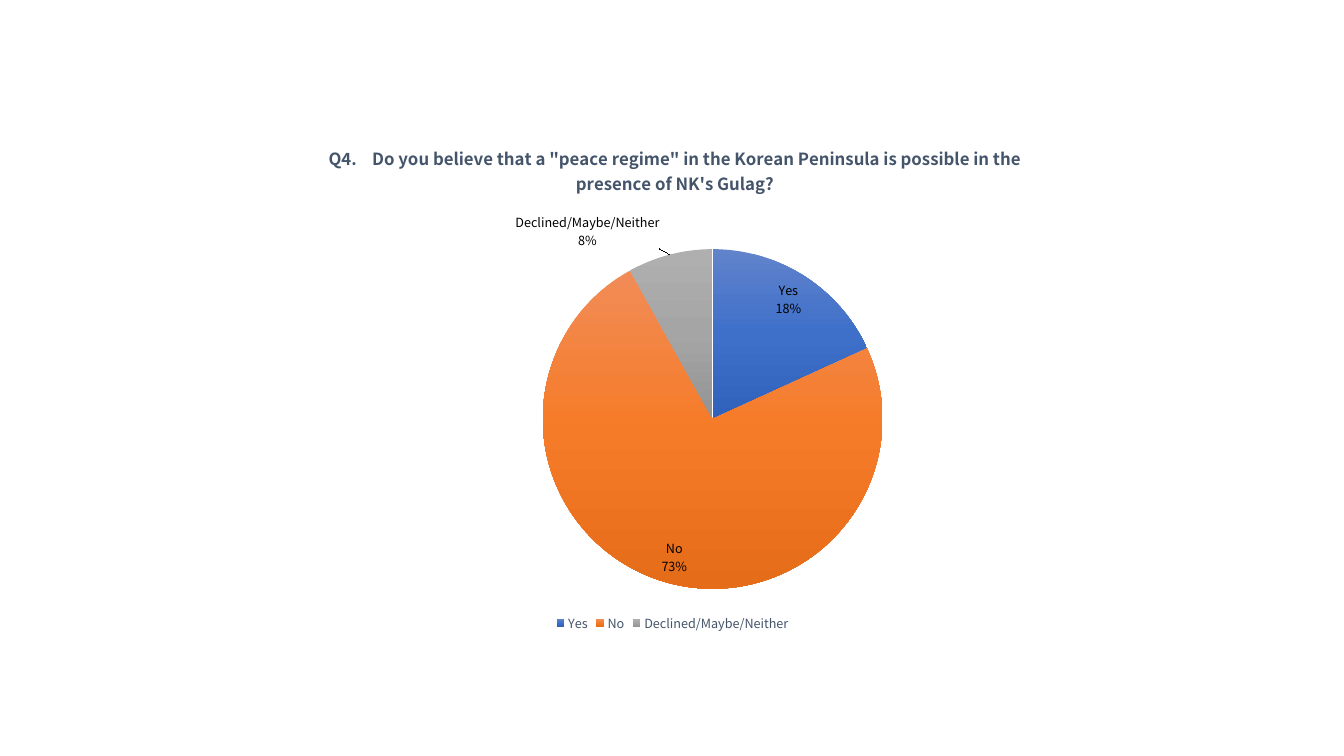
from copy import deepcopy

from lxml.etree import SubElement
from pptx import Presentation
from pptx.chart.data import CategoryChartData
from pptx.dml.color import RGBColor
from pptx.enum.chart import XL_CHART_TYPE, XL_LABEL_POSITION, XL_LEGEND_POSITION
from pptx.oxml.ns import qn
from pptx.util import Emu, Pt

PX = 9071
FONT = "Noto Sans CJK KR"
COLORS = {"text": "44546A", "label": "000000"}
QUESTION = (
    'Q4.\u00a0\u00a0\u00a0 Do you believe that a "peace regime" in the Korean Peninsula '
    "is possible in the presence of NK's Gulag?"
).replace("\u00a0", " ")
ANSWERS = [
    ("Yes", 18, ["6183CB", "3E70CA", "3062BB"]),
    ("No", 73, ["F18C57", "F67B28", "E56C19"]),
    ("Declined/Maybe/Neither", 8, ["AFAFAF", "A5A5A5", "939393"]),
]
PERCENT = '0"%"'


def style_font(font, size, color, bold=False):
    font.name = FONT
    font.size = Pt(size)
    font.bold = bold
    font.color.rgb = RGBColor.from_string(COLORS[color])


def set_layout(parent, index, settings):
    for layout in parent.findall(qn("c:layout")):
        parent.remove(layout)
    layout = SubElement(parent, qn("c:layout"))
    manual = SubElement(layout, qn("c:manualLayout"))
    for name, value in settings.items():
        SubElement(manual, qn("c:" + name)).set("val", str(value))
    parent.insert(index, layout)


presentation = Presentation()
presentation.slide_width = Emu(1344 * PX)
presentation.slide_height = Emu(756 * PX)
slide = presentation.slides.add_slide(presentation.slide_layouts[6])

chart_data = CategoryChartData(number_format="0")
chart_data.categories = [name for name, value, shades in ANSWERS]
chart_data.add_series(QUESTION, [value for name, value, shades in ANSWERS])
chart = slide.shapes.add_chart(
    XL_CHART_TYPE.PIE, Emu(216 * PX), Emu(120 * PX), Emu(913 * PX), Emu(516 * PX), chart_data
).chart
style_font(chart.font, 10, "label")

chart.has_title = True
title_run = chart.chart_title.text_frame.paragraphs[0].add_run()
title_run.text = QUESTION
style_font(title_run.font, 12, "text", True)
set_layout(
    chart.chart_title._element, 1,
    {"xMode": "edge", "yMode": "edge", "x": 0.12, "y": 0.04},
)

chart.has_legend = True
chart.legend.position = XL_LEGEND_POSITION.BOTTOM
chart.legend.include_in_layout = False
style_font(chart.legend.font, 9, "text")

plot = chart.plots[0]
plot.vary_by_categories = True
set_layout(
    plot._element.getparent(), 0,
    {"layoutTarget": "inner", "xMode": "edge", "yMode": "edge",
     "x": 0.358, "y": 0.25, "w": 0.372, "h": 0.659},
)

series = plot.series[0]
for index, (name, value, shades) in enumerate(ANSWERS):
    fill = series.points[index].format.fill
    fill.gradient()
    fill.gradient_angle = 270
    stop_list = list(series._element.iter(qn("a:gsLst")))[index]
    stop_list.append(deepcopy(stop_list[0]))
    for stop, shade, position in zip(fill.gradient_stops, shades, (0, 0.5, 1)):
        stop.color.rgb = RGBColor.from_string(shade)
        stop.position = position

labels = series.data_labels
labels.show_category_name = True
labels.show_value = True
labels.show_percentage = False
labels.number_format = PERCENT
labels.number_format_is_linked = False
labels.position = XL_LABEL_POSITION.INSIDE_END
style_font(labels.font, 9, "label")

declined = series.points[2].data_label
declined.position = XL_LABEL_POSITION.OUTSIDE_END
style_font(declined.font, 9, "label")
declined_element = labels._element.find(qn("c:dLbl"))
declined_element.find(qn("c:showCatName")).set("val", "1")
set_layout(declined_element, 1, {"x": -0.01, "y": 0})
declined_element.insert(2, deepcopy(labels._element.find(qn("c:numFmt"))))

for element in (labels._element, declined_element):
    separator = SubElement(element, qn("c:separator"))
    separator.text = "\n"
    element.find(qn("c:showBubbleSize")).addnext(separator)

presentation.save("out.pptx")
